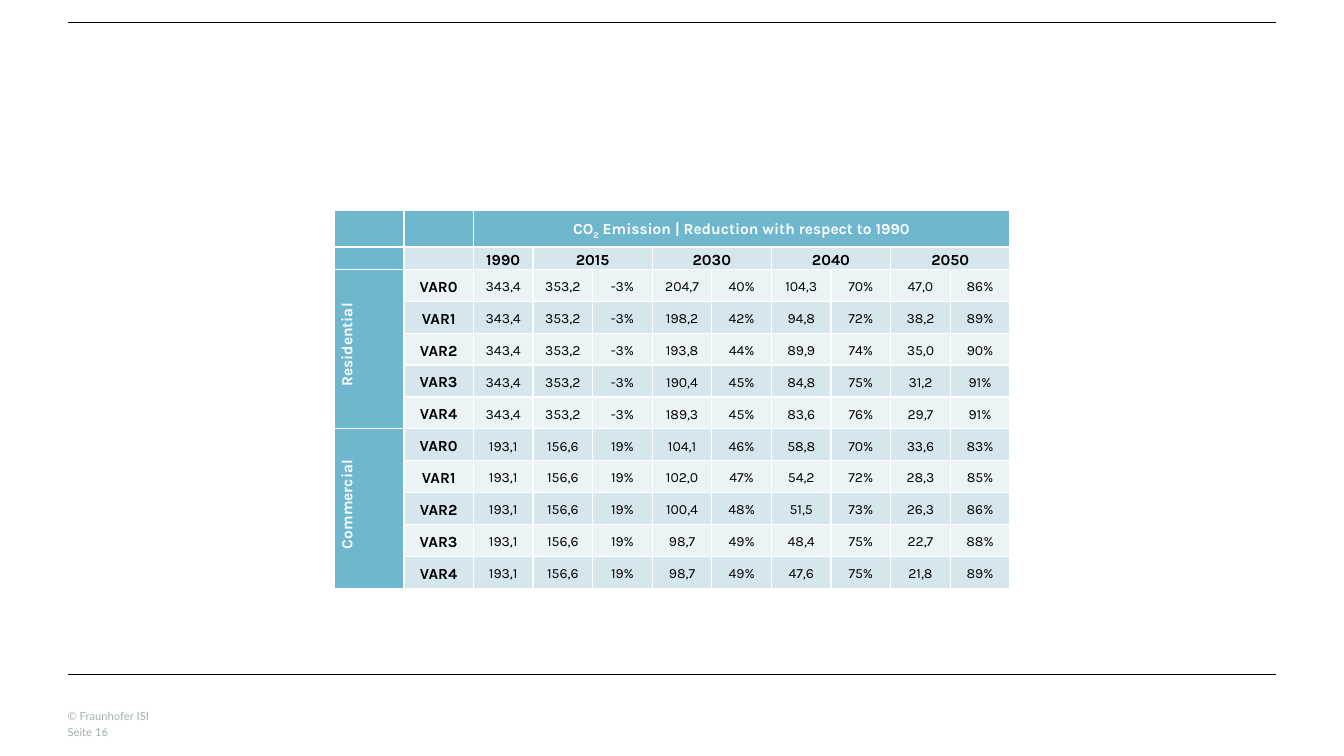
from dataclasses import dataclass

import pptx
import pptx.dml.color
import pptx.enum.shapes
import pptx.enum.text
import pptx.oxml
import pptx.util
from pptx.util import Pt

TEAL, PALE, LIGHT = "6EB7CF", "D5E6ED", "EBF3F6"
WHITE, BLACK, GREY = "FFFFFF", "000000", "A8AFAF"
MARGIN_LEFT, MARGIN_RIGHT = 48.24, 911.52
TABLE_LEFT, TABLE_TOP = 239, 150.5
COLUMN_WIDTHS = [49.6] * 2 + [42.6] * 9
ROW_HEIGHTS = [26, 14.6] + [22.8] * 10


@dataclass
class Sector:
    name: str
    base_1990: str
    base_2015: list[str]
    scenarios: list[list[str]]


@dataclass
class FooterLine:
    text: str
    top: float


SECTORS = [
    Sector("Residential", "343,4", ["353,2", "-3%"], [
        ["204,7", "40%", "104,3", "70%", "47,0", "86%"],
        ["198,2", "42%", "94,8", "72%", "38,2", "89%"],
        ["193,8", "44%", "89,9", "74%", "35,0", "90%"],
        ["190,4", "45%", "84,8", "75%", "31,2", "91%"],
        ["189,3", "45%", "83,6", "76%", "29,7", "91%"],
    ]),
    Sector("Commercial", "193,1", ["156,6", "19%"], [
        ["104,1", "46%", "58,8", "70%", "33,6", "83%"],
        ["102,0", "47%", "54,2", "72%", "28,3", "85%"],
        ["100,4", "48%", "51,5", "73%", "26,3", "86%"],
        ["98,7", "49%", "48,4", "75%", "22,7", "88%"],
        ["98,7", "49%", "47,6", "75%", "21,8", "89%"],
    ]),
]
FOOTER = [FooterLine("© Fraunhofer ISI", 506.9), FooterLine("Seite 16", 518.4)]


def rgb(colour: str) -> pptx.dml.color.RGBColor:
    return pptx.dml.color.RGBColor.from_string(colour)


def add_text(paragraph, text: str, *, size: float = 11, colour: str = BLACK,
             bold: bool = True, font: str = "Karla", baseline: int = 0) -> None:
    """Append one run; baseline is in thousandths of a percent."""
    run = paragraph.add_run()
    run.text = text
    run.font.name = font
    run.font.size = Pt(size)
    run.font.bold = bold
    run.font.color.rgb = rgb(colour)
    if baseline:
        run._r.get_or_add_rPr().set("baseline", str(baseline))


def add_rule(slide, y: float) -> None:
    line = slide.shapes.add_connector(
        pptx.enum.shapes.MSO_CONNECTOR.STRAIGHT,
        Pt(MARGIN_LEFT), Pt(y), Pt(MARGIN_RIGHT), Pt(y))
    line.line.color.rgb = rgb(BLACK)
    line.line.width = Pt(0.4)
    pptx.oxml.ns  # namespace helpers used below
    line._element.spPr.append(
        line._element.makeelement(pptx.oxml.ns.qn("a:effectLst"), {}))


def add_footer_line(slide, footer: FooterLine) -> None:
    box = slide.shapes.add_textbox(
        Pt(MARGIN_LEFT), Pt(footer.top), Pt(188.6), Pt(9.4))
    frame = box.text_frame
    frame.word_wrap = True
    frame.margin_left = frame.margin_right = Pt(0)
    frame.margin_top = frame.margin_bottom = Pt(0)
    add_text(frame.paragraphs[0], footer.text,
             size=8, colour=GREY, bold=False, font="Lato")


def format_cell(cell, fill: str, space_after: float = 0):
    """Fill and align a cell and return its paragraph."""
    cell.fill.solid()
    cell.fill.fore_color.rgb = rgb(fill)
    cell.vertical_anchor = pptx.enum.text.MSO_ANCHOR.MIDDLE
    cell.margin_left = cell.margin_right = Pt(5)
    cell.margin_top = cell.margin_bottom = Pt(0)
    paragraph = cell.text_frame.paragraphs[0]
    paragraph.alignment = pptx.enum.text.PP_ALIGN.CENTER
    paragraph.line_spacing = 1.2
    paragraph.space_after = Pt(space_after)
    return paragraph


def shrink_empty_cells(table) -> None:
    """Keep the default text size of empty cells from stretching their rows."""
    for cell in table.iter_cells():
        if not cell.text:
            paragraph = cell.text_frame.paragraphs[0]._p
            paragraph.append(paragraph.makeelement(
                pptx.oxml.ns.qn("a:endParaRPr"), {"sz": "800"}))


def fill_headings(table) -> None:
    for column in (0, 1):
        format_cell(table.cell(0, column), TEAL)
    format_cell(table.cell(1, 0), TEAL)
    format_cell(table.cell(1, 1), PALE)

    table.cell(0, 2).merge(table.cell(0, 10))
    heading = format_cell(table.cell(0, 2), TEAL, space_after=6)
    add_text(heading, "CO", colour=WHITE)
    add_text(heading, "2", colour=WHITE, baseline=-25000)
    add_text(heading, " Emission | Reduction with respect to 1990", colour=WHITE)

    add_text(format_cell(table.cell(1, 2), PALE, space_after=6), "1990")
    for index, year in enumerate(["2015", "2030", "2040", "2050"]):
        column = 3 + 2 * index
        table.cell(1, column).merge(table.cell(1, column + 1))
        add_text(format_cell(table.cell(1, column), PALE, space_after=6), year)


def fill_sector(table, sector: Sector, first_row: int) -> None:
    last_row = first_row + len(sector.scenarios) - 1
    name_cell = table.cell(first_row, 0)
    name_cell.merge(table.cell(last_row, 0))
    name = format_cell(name_cell, TEAL, space_after=6)
    name._p.get_or_add_pPr().set("marL", str(Pt(5.8)))
    name_cell._tc.get_or_add_tcPr().set("vert", "vert270")
    add_text(name, sector.name, colour=WHITE)

    for index, scenario in enumerate(sector.scenarios):
        row = first_row + index
        fill = PALE if row % 2 else LIGHT
        add_text(format_cell(table.cell(row, 1), fill), f"VAR{index}")
        values = [sector.base_1990, *sector.base_2015, *scenario]
        for column, value in enumerate(values, start=2):
            add_text(format_cell(table.cell(row, column), fill), value,
                     size=10, bold=False)


def add_emission_table(slide) -> None:
    table = slide.shapes.add_table(
        len(ROW_HEIGHTS), len(COLUMN_WIDTHS), Pt(TABLE_LEFT), Pt(TABLE_TOP),
        Pt(sum(COLUMN_WIDTHS)), Pt(sum(ROW_HEIGHTS))).table
    table.first_col = True
    for column, width in zip(table.columns, COLUMN_WIDTHS):
        column.width = Pt(width)
    for row, height in zip(table.rows, ROW_HEIGHTS):
        row.height = Pt(height)
    fill_headings(table)
    first_row = 2
    for sector in SECTORS:
        fill_sector(table, sector, first_row)
        first_row += len(sector.scenarios)
    shrink_empty_cells(table)


def main() -> None:
    presentation = pptx.Presentation()
    presentation.slide_width = Pt(960)
    presentation.slide_height = Pt(540)
    slide = presentation.slides.add_slide(presentation.slide_layouts[6])
    for y in (15.84, 481.68):
        add_rule(slide, y)
    for footer in FOOTER:
        add_footer_line(slide, footer)
    add_emission_table(slide)
    presentation.save("out.pptx")


if __name__ == "__main__":
    main()
